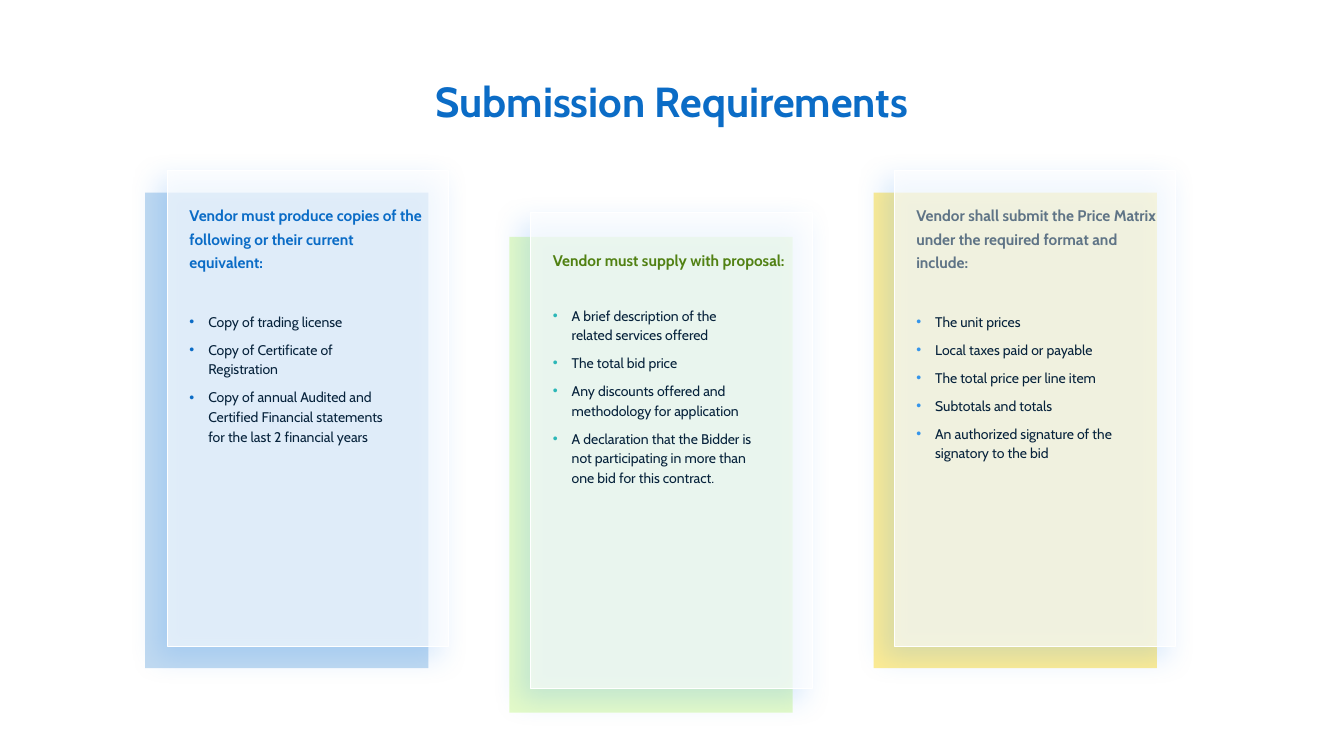
import pptx
import pptx.util
import pptx.dml.color
import pptx.enum.shapes
import pptx.enum.text
import pptx.oxml
import pptx.oxml.ns
from lxml import etree

Pt = pptx.util.Pt
RGBColor = pptx.dml.color.RGBColor
qn = pptx.oxml.ns.qn
ALIGN = pptx.enum.text.PP_ALIGN

BLUE = RGBColor(0x0B, 0x6C, 0xC6)
LIME = RGBColor(0x97, 0xF3, 0x24)
YELLOW = RGBColor(0xFE, 0xEC, 0x93)
GREEN = RGBColor(0x51, 0x81, 0x13)
SLATE = RGBColor(0x5F, 0x74, 0x86)
TEAL = RGBColor(0x2C, 0xB7, 0xB7)
SKY = RGBColor(0x35, 0x95, 0xEA)
SHADOW = RGBColor(0x37, 0x8F, 0xF2)
INK = RGBColor(0x06, 0x22, 0x3B)
WHITE = RGBColor(0xFF, 0xFF, 0xFF)

CARD_HEIGHT = 339.8
PANEL_WIDTH = 201
BACK_LEFT, BACK_PITCH = 103.7, 260.2
PANEL_LEFT, PANEL_PITCH = 119.5, 259.6
TEXT_SHIFT = 1.4

# Per card: tops of back, panel, heading and list; heading height; list size
CARDS = [
    dict(fill=BLUE, opacity=25, color=BLUE, bullet=BLUE,
         tops=(137.5, 121.7, 139.7, 218.2), heading_height=56.9, list_size=(180.7, 103.7),
         heading="Vendor must produce copies of the following or their current equivalent:",
         items=["Copy of trading license", "Copy of Certificate of Registration",
                "Copy of annual Audited and Certified Financial statements for the last 2 financial years"]),
    dict(fill=LIME, opacity=25, color=GREEN, bullet=TEAL,
         tops=(169.2, 151.9, 172.1, 213.8), heading_height=40.3, list_size=(175, 137.5),
         heading="Vendor must supply with proposal:",
         items=["A brief description of the related services offered", "The total bid price",
                "Any discounts offered and methodology for application",
                "A declaration that the Bidder is not participating in more than one bid for this contract."]),
    dict(fill=YELLOW, opacity=100, color=SLATE, bullet=SKY,
         tops=(137.5, 121.7, 139.7, 218.2), heading_height=56.9, list_size=(186.5, 115.2),
         heading="Vendor shall submit the Price Matrix under the required format and include:",
         items=["The unit prices", "Local taxes paid or payable", "The total price per line item",
                "Subtotals and totals", "An authorized signature of the signatory to the bid"]),
]


class SlideBuilder:
    """Holds the text style and the current slide."""

    def __init__(self, page, font="Cabin"):
        self.page = page
        self.font = font

    def place(self, box, left, top, width, height):
        box.left, box.top, box.width, box.height = Pt(left), Pt(top), Pt(width), Pt(height)
        # Bring to the front
        box.element.getparent().append(box.element)

    def set_text(self, box, texts, size, color, bold, side_inset=14.4, align=ALIGN.LEFT):
        frame = box.text_frame
        frame.text = "\n".join(texts)
        frame.word_wrap = True
        frame.auto_size = pptx.enum.text.MSO_AUTO_SIZE.SHAPE_TO_FIT_TEXT
        frame.vertical_anchor = pptx.enum.text.MSO_ANCHOR.TOP
        frame.margin_left = frame.margin_right = Pt(side_inset)
        frame.margin_top = frame.margin_bottom = Pt(3.6)
        for para in frame.paragraphs:
            para.alignment = align
            para.space_before = Pt(0)
            para.font.name = self.font
            para.font.size = Pt(size)
            para.font.bold = bold
            para.font.color.rgb = color
        return frame.paragraphs

    def title(self, text, *bounds):
        box = self.page.shapes.title
        self.place(box, *bounds)
        self.set_text(box, [text], 30, BLUE, True, 7.2, ALIGN.CENTER)

    def heading(self, text, color, *bounds):
        box = self.page.shapes.add_textbox(*map(Pt, bounds))
        for para in self.set_text(box, [text], 11, color, True):
            para.line_spacing = Pt(17)

    def bullets(self, box, items, color, *bounds):
        self.place(box, *bounds)
        for para in self.set_text(box, items, 10, INK, False):
            para.line_spacing = Pt(14)
            para.space_after = Pt(6)
            properties = para._p.get_or_add_pPr()
            properties.set("marL", str(Pt(13.5)))
            properties.set("indent", str(-Pt(13.5)))
            bullet_color = etree.SubElement(properties, qn("a:buClr"))
            etree.SubElement(bullet_color, qn("a:srgbClr"), val=str(color))
            etree.SubElement(properties, qn("a:buFont"), typeface="Arial")
            etree.SubElement(properties, qn("a:buChar"), char="•")
            # Keep default run properties after the bullet
            properties.append(properties.find(qn("a:defRPr")))

    def rectangle(self, color, opacity, *bounds):
        shape = self.page.shapes.add_shape(
            pptx.enum.shapes.MSO_SHAPE.RECTANGLE, *map(Pt, bounds))
        shape.shadow.inherit = False
        shape.fill.solid()
        shape.fill.fore_color.rgb = color
        shape.line.fill.background()
        if opacity < 100:
            paint = shape.element.spPr.find(qn("a:solidFill")).find(qn("a:srgbClr"))
            etree.SubElement(paint, qn("a:alpha"), val=str(opacity * 1000))
        return shape

    def glass_panel(self, *bounds):
        panel = self.rectangle(WHITE, 65, *bounds)
        panel.line.color.rgb = WHITE
        panel.line.width = Pt(0.5)
        effects = panel.element.spPr.find(qn("a:effectLst"))
        shadow = etree.SubElement(
            effects, qn("a:outerShdw"), blurRad=str(Pt(20)), dist=str(Pt(10)),
            dir=str(135 * 60000), algn="tr", rotWithShape="0")
        tint = etree.SubElement(shadow, qn("a:srgbClr"), val=str(SHADOW))
        etree.SubElement(tint, qn("a:alpha"), val="30000")


def main():
    deck = pptx.Presentation()
    deck.slide_width, deck.slide_height = Pt(960), Pt(540)
    # Comparison layout: a title and four bodies, three of them used
    page = deck.slides.add_slide(deck.slide_layouts[4])
    builder = SlideBuilder(page)
    *bodies, spare = [box for box in page.placeholders if 1 <= box.placeholder_format.idx <= 4]
    spare.element.getparent().remove(spare.element)

    builder.title("Submission Requirements", 157, 50.4, 645.8, 43.9)

    # Cards: tinted back, glass panel, heading, list
    for index, (card, body) in enumerate(zip(CARDS, bodies)):
        back_top, panel_top, heading_top, list_top = card["tops"]
        panel_left = PANEL_LEFT + index * PANEL_PITCH
        text_left = panel_left + TEXT_SHIFT
        builder.rectangle(card["fill"], card["opacity"],
                          BACK_LEFT + index * BACK_PITCH, back_top, 202.3, CARD_HEIGHT)
        builder.glass_panel(panel_left, panel_top, PANEL_WIDTH, CARD_HEIGHT)
        builder.heading(card["heading"], card["color"],
                        text_left, heading_top, PANEL_WIDTH, card["heading_height"])
        builder.bullets(body, card["items"], card["bullet"],
                        text_left, list_top, *card["list_size"])

    deck.save("out.pptx")


if __name__ == "__main__":
    main()
